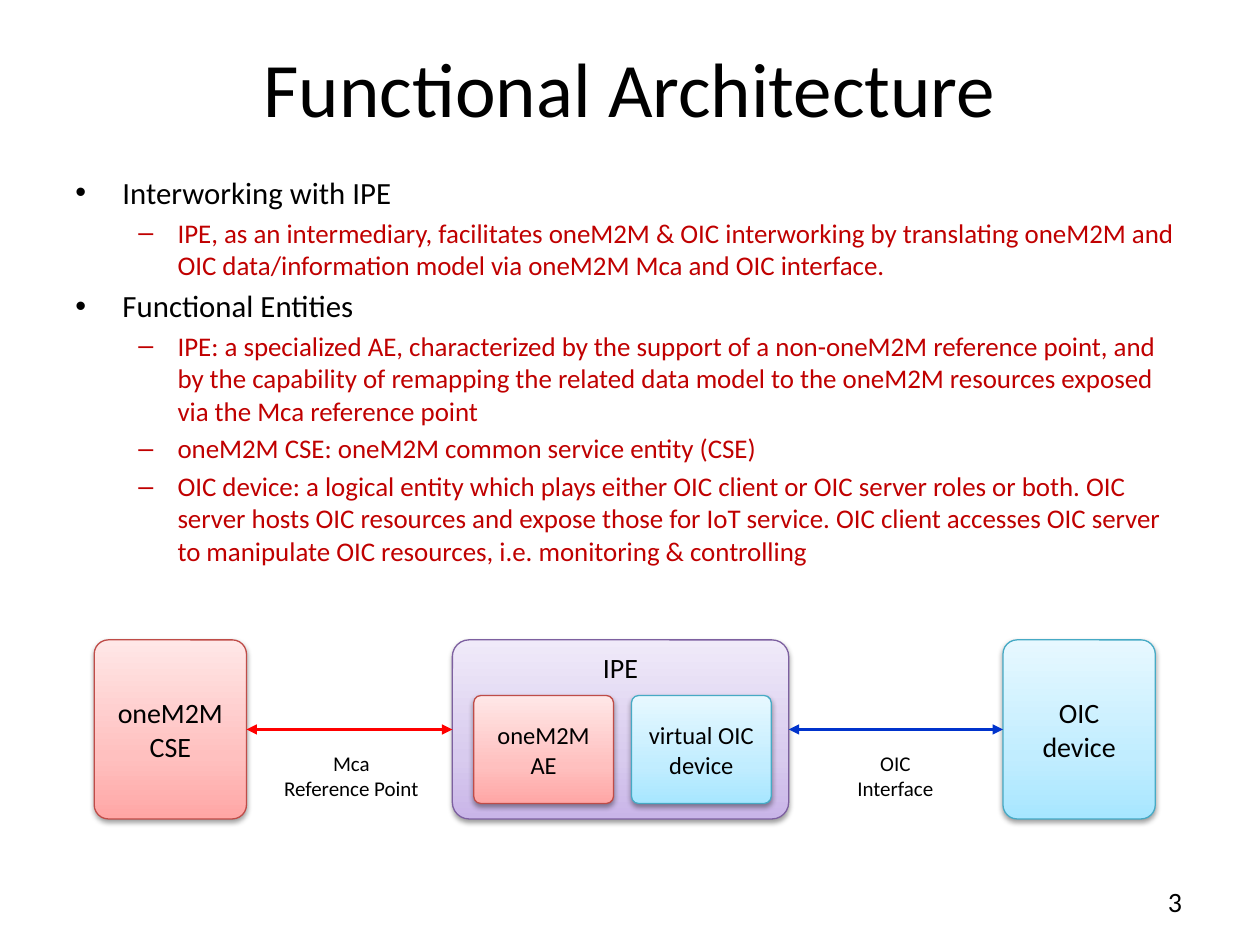
import copy

import lxml.etree
import pptx
import pptx.dml.color
import pptx.enum.shapes
import pptx.enum.text
import pptx.oxml
import pptx.oxml.ns
import pptx.util

Cm = pptx.util.Cm
Pt = pptx.util.Pt
ALIGN = pptx.enum.text.PP_ALIGN
ANCHOR = pptx.enum.text.MSO_ANCHOR
SHAPES = pptx.enum.shapes.MSO_SHAPE
qn = pptx.oxml.ns.qn

FONT = "Calibri"
COLORS = {"text": "000000", "detail": "C00000", "mca": "FF0000", "oic": "0033CC"}
# Box themes: outline, then gradient from bottom to top
THEMES = {
    "red": ("BF4C48", ["FFA6A5", "FFC0BF", "FFE7E7"]),
    "blue": ("46AAC5", ["A7E6FF", "C1EDFF", "E7F8FF"]),
    "purple": ("7D60A0", ["C9B5E8", "D8CBEE", "F0EAF9"]),
}
STOPS = [0, 0.35, 1]
SHADOW = (
    '<a:outerShdw xmlns:a="http://schemas.openxmlformats.org/drawingml/2006/main" '
    'blurRad="40000" dist="20000" dir="5400000" rotWithShape="0">'
    '<a:srgbClr val="000000"><a:alpha val="38000"/></a:srgbClr></a:outerShdw>'
)
# Bullet levels: character, colour, size, left margin and hang in cm
LEVELS = [("•", "text", 17.6, 0.95, 0.95), ("–", "detail", 15.4, 2.06, 0.79)]
BULLETS = [
    (0, "Interworking with IPE"),
    (1, "IPE, as an intermediary, facilitates oneM2M & OIC interworking by "
        "translating oneM2M and OIC data/information model via oneM2M Mca and "
        "OIC interface."),
    (0, "Functional Entities"),
    (1, "IPE: a specialized AE, characterized by the support of a non-oneM2M "
        "reference point, and by the capability of remapping the related data "
        "model to the oneM2M resources exposed via the Mca reference point"),
    (1, "oneM2M CSE: oneM2M common service entity (CSE)"),
    (1, "OIC device: a logical entity which plays either OIC client or OIC server "
        "roles or both. OIC server hosts OIC resources and expose those for IoT "
        "service. OIC client accesses OIC server to manipulate OIC resources, "
        "i.e. monitoring & controlling"),
]


def rgb(value):
    return pptx.dml.color.RGBColor.from_string(value)


def style(p, size, color="text", align=ALIGN.CENTER):
    p.alignment = align
    for r in p.runs:
        r.font.name = FONT
        r.font.size = Pt(size)
        r.font.color.rgb = rgb(COLORS[color])


def add_text(s, at, text, size, align=ALIGN.CENTER, wrap=False, anchor=ANCHOR.TOP):
    tf = s.shapes.add_textbox(*map(Cm, at)).text_frame
    tf.word_wrap = wrap
    tf.vertical_anchor = anchor
    tf.text = text
    for p in tf.paragraphs:
        style(p, size, align=align)
    return tf


def add_bullets(s, at, items):
    tf = s.shapes.add_textbox(*map(Cm, at)).text_frame
    tf.word_wrap = True
    for i, (level, text) in enumerate(items):
        char, color, size, margin, hang = LEVELS[level]
        p = tf.add_paragraph() if i else tf.paragraphs[0]
        p.text = text
        p.level = level
        p.space_before = Pt(size * 0.2)
        style(p, size, color, ALIGN.LEFT)
        pPr = p._p.get_or_add_pPr()
        pPr.set("marL", str(Cm(margin)))
        pPr.set("indent", str(-Cm(hang)))
        lxml.etree.SubElement(pPr, qn("a:buFont")).set("typeface", "Arial")
        lxml.etree.SubElement(pPr, qn("a:buChar")).set("char", char)


def add_box(s, at, text, theme, size=16, radius=0.093, anchor=ANCHOR.MIDDLE):
    line, shades = THEMES[theme]
    sp = s.shapes.add_shape(SHAPES.ROUNDED_RECTANGLE, *map(Cm, at))
    sp.adjustments[0] = radius
    # Three-stop gradient running upwards
    sp.fill.gradient()
    sp.fill.gradient_angle = 90
    first = sp._element.spPr.find(".//" + qn("a:gs"))
    first.addnext(copy.deepcopy(first))
    for stop, position, shade in zip(sp.fill.gradient_stops, STOPS, shades):
        stop.position = position
        stop.color.rgb = rgb(shade)
    sp.line.color.rgb = rgb(line)
    sp.line.width = Pt(0.75)
    # Soft shadow below
    sp.shadow.inherit = False
    effects = sp._element.spPr.find(qn("a:effectLst"))
    effects.append(pptx.oxml.parse_xml(SHADOW))
    tf = sp.text_frame
    tf.word_wrap = True
    tf.vertical_anchor = anchor
    tf.text = text
    style(tf.paragraphs[0], size)
    return sp


def add_link(s, left, right, color):
    cx = s.shapes.add_connector(pptx.enum.shapes.MSO_CONNECTOR.STRAIGHT, 0, 0, 0, 0)
    cx.begin_connect(left, 3)
    cx.end_connect(right, 1)
    cx.line.color.rgb = rgb(COLORS[color])
    cx.line.width = Pt(1.5)
    ln = cx.line._get_or_add_ln()
    for end in ("a:headEnd", "a:tailEnd"):
        lxml.etree.SubElement(ln, qn(end)).set("type", "triangle")
    lxml.etree.SubElement(cx._element.spPr, qn("a:effectLst"))


def main():
    prs = pptx.Presentation()
    prs.slide_width, prs.slide_height = Cm(25.4), Cm(19.05)
    s = prs.slides.add_slide(prs.slide_layouts[6])

    # Page number, title and body
    add_text(s, (22.91, 17.7, 1.17, 0.94), "3", 16, ALIGN.RIGHT)
    title = add_text(s, (2.64, 0.84, 20.12, 2.11), "Functional Architecture", 44,
                     wrap=True, anchor=ANCHOR.MIDDLE)
    title.paragraphs[0].line_spacing = 0.85
    add_bullets(s, (1.27, 3.38, 22.86, 8.69), BULLETS)

    # Entities
    top, height = 12.9, 3.61
    device = add_box(s, (20.22, top, 3.07, height), "OIC device", "blue")
    cse = add_box(s, (1.9, top, 3.07, height), "oneM2M CSE", "red")
    ipe = add_box(s, (9.12, top, 6.78, height), "IPE", "purple", anchor=ANCHOR.TOP)

    # Parts inside the IPE
    parts = [("oneM2M AE", "red"), ("virtual OIC device", "blue")]
    for i, (text, theme) in enumerate(parts):
        add_box(s, (9.55 + i * 3.18, 14.02, 2.82, 2.18), text, theme, 14, 0.069)

    # Interfaces between entities
    add_link(s, ipe, device, "oic")
    add_link(s, cse, ipe, "mca")
    add_text(s, (5.41, 15.01, 3.35, 1.27), "Mca\nReference Point", 12)
    add_text(s, (17.02, 15.01, 2.06, 1.27), "OIC\nInterface", 12)

    prs.save("out.pptx")


if __name__ == "__main__":
    main()
